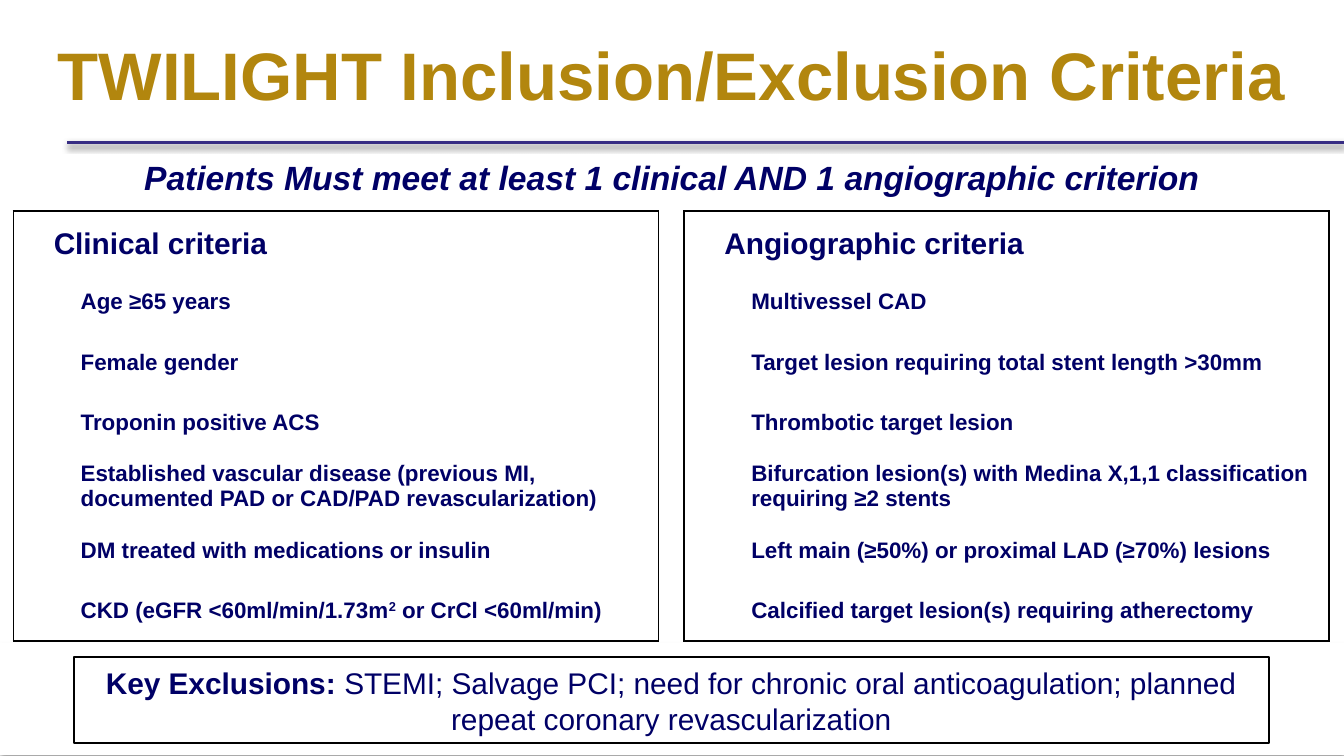
from lxml.etree import SubElement
from pptx import Presentation
from pptx.dml.color import RGBColor
from pptx.enum.shapes import MSO_CONNECTOR, MSO_SHAPE
from pptx.enum.text import MSO_ANCHOR, PP_ALIGN
from pptx.oxml import parse_xml
from pptx.oxml.ns import nsdecls, qn
from pptx.util import Inches, Pt

GOLD = RGBColor(0xB2, 0x86, 0x0E)
NAVY = RGBColor(0x00, 0x00, 0x66)
PURPLE = RGBColor(0x37, 0x2D, 0x83)
BLACK = RGBColor(0x00, 0x00, 0x00)
WHITE = RGBColor(0xFF, 0xFF, 0xFF)

ROW_HEIGHTS = [0.45, 0.45, 0.45, 0.45, 0.5, 0.45, 0.45]
CLINICAL = [
    "Clinical criteria",
    "Age ≥65 years",
    "Female gender",
    "Troponin positive ACS",
    "Established vascular disease (previous MI, documented PAD or CAD/PAD revascularization)",
    "DM treated with medications or insulin",
    ["CKD (eGFR <60ml/min/1.73m", ("2", {"sup": True}), " or CrCl <60ml/min)"],
]
ANGIOGRAPHIC = [
    "Angiographic criteria",
    "Multivessel CAD",
    "Target lesion requiring total stent length >30mm",
    "Thrombotic target lesion",
    "Bifurcation lesion(s) with Medina X,1,1 classification requiring ≥2 stents",
    "Left main (≥50%) or proximal LAD (≥70%) lesions",
    "Calcified target lesion(s) requiring atherectomy",
]


def add_run(p, text, size=12, color=NAVY, bold=True, italic=False, sup=False):
    r = p.add_run()
    r.text = text
    r.font.name = "Arial"
    r.font.size = Pt(size)
    r.font.bold = bold
    r.font.italic = italic
    r.font.color.rgb = color
    if sup:
        r.font._element.set("baseline", "30000")


def write(tf, parts, align=PP_ALIGN.LEFT, **fmt):
    """Fill a frame with one paragraph of strings or (string, format) pairs."""
    tf.word_wrap = True
    tf.vertical_anchor = MSO_ANCHOR.MIDDLE
    p = tf.paragraphs[0]
    p.alignment = align
    for part in [parts] if isinstance(parts, str) else parts:
        text, extra = (part, {}) if isinstance(part, str) else part
        add_run(p, text, **{**fmt, **extra})


def set_shadow(shape, blur=0, dist=0, alpha=0):
    effects = SubElement(shape.element.spPr, qn("a:effectLst"))
    if alpha:
        effects.append(parse_xml(
            f'<a:outerShdw {nsdecls("a")} blurRad="{Pt(blur)}" dist="{Pt(dist)}" '
            'dir="5400000" rotWithShape="0"><a:srgbClr val="000000">'
            f'<a:alpha val="{alpha * 1000}"/></a:srgbClr></a:outerShdw>'))


def set_borders(cell, sides):
    tcPr = cell._tc.get_or_add_tcPr()
    for side in "LRTB":
        fill = (f'<a:solidFill><a:srgbClr val="{BLACK}"/></a:solidFill>'
                if side in sides else "<a:noFill/>")
        tcPr.append(parse_xml(
            f'<a:ln{side} {nsdecls("a")} w="{Pt(1)}">{fill}</a:ln{side}>'))


class CriteriaSlide:
    def __init__(self, prs):
        self.s = prs.slides.add_slide(prs.slide_layouts[5])

    def title(self, text, x, y, w, h):
        sp = self.s.shapes.title
        sp.left, sp.top, sp.width, sp.height = map(Inches, (x, y, w, h))
        write(sp.text_frame, text, PP_ALIGN.CENTER, size=36, color=GOLD)

    def rule(self, x1, x2, y):
        line = self.s.shapes.add_connector(
            MSO_CONNECTOR.STRAIGHT, Inches(x1), Inches(y), Inches(x2), Inches(y))
        line.line.color.rgb = PURPLE
        line.line.width = Pt(2)
        set_shadow(line, 3.1, 1.6, 38)

    def box(self, x, y, w, h, line, width, **shadow):
        sp = self.s.shapes.add_shape(
            MSO_SHAPE.RECTANGLE, Inches(x), Inches(y), Inches(w), Inches(h))
        sp.fill.solid()
        sp.fill.fore_color.rgb = WHITE
        sp.line.color.rgb = line
        sp.line.width = Pt(width)
        set_shadow(sp, **shadow)
        return sp

    def label(self, text, x, y, w, h, **fmt):
        sp = self.s.shapes.add_textbox(Inches(x), Inches(y), Inches(w), Inches(h))
        write(sp.text_frame, text, PP_ALIGN.CENTER, **fmt)

    def criteria(self, rows, x, y, w):
        """One-column table: a heading row, then indented criteria."""
        table = self.s.shapes.add_table(
            len(rows), 1, Inches(x), Inches(y), Inches(w),
            Inches(sum(ROW_HEIGHTS))).table
        table.first_row = table.horz_banding = False
        last = len(rows) - 1
        for i, (text, height) in enumerate(zip(rows, ROW_HEIGHTS)):
            table.rows[i].height = Inches(height)
            cell = table.cell(i, 0)
            heading = i == 0
            cell.margin_left = Inches(0.3 if heading else 0.5)
            cell.margin_right = Inches(0.1)
            cell.margin_top = Inches(0.05)
            cell.margin_bottom = Inches(0 if heading else 0.05)
            cell.vertical_anchor = MSO_ANCHOR.MIDDLE
            write(cell.text_frame, text, size=16 if heading else 12)
            set_borders(cell, "LR" + "T" * heading + "B" * (i == last))
            cell.fill.background()


def main():
    prs = Presentation()
    prs.slide_width = Inches(10)
    prs.slide_height = prs.slide_width * 9 // 16
    slide = CriteriaSlide(prs)

    # Heading
    slide.rule(0.5, 10, 1.06)
    slide.title("TWILIGHT Inclusion/Exclusion Criteria", -0.01, 0.19, 10.02, 0.71)

    # Footer band
    slide.box(0, 4.79, 10, 0.82, WHITE, 0.75, blur=3.1, dist=1.8, alpha=35)

    # Inclusion criteria
    for x, rows in ((0.1, CLINICAL), (5.09, ANGIOGRAPHIC)):
        slide.criteria(rows, x, 1.57, 4.8)
    slide.label("Patients Must meet at least 1 clinical AND 1 angiographic criterion",
                0.36, 1.12, 9.28, 0.4, size=18, italic=True)

    # Exclusions
    sp = slide.box(0.55, 4.89, 8.89, 0.64, BLACK, 1)
    write(sp.text_frame,
          ["Key Exclusions: ",
           ("STEMI; Salvage PCI; need for chronic oral anticoagulation; "
            "planned repeat coronary revascularization", {"bold": False})],
          PP_ALIGN.CENTER, size=16)

    prs.save("out.pptx")


if __name__ == "__main__":
    main()
